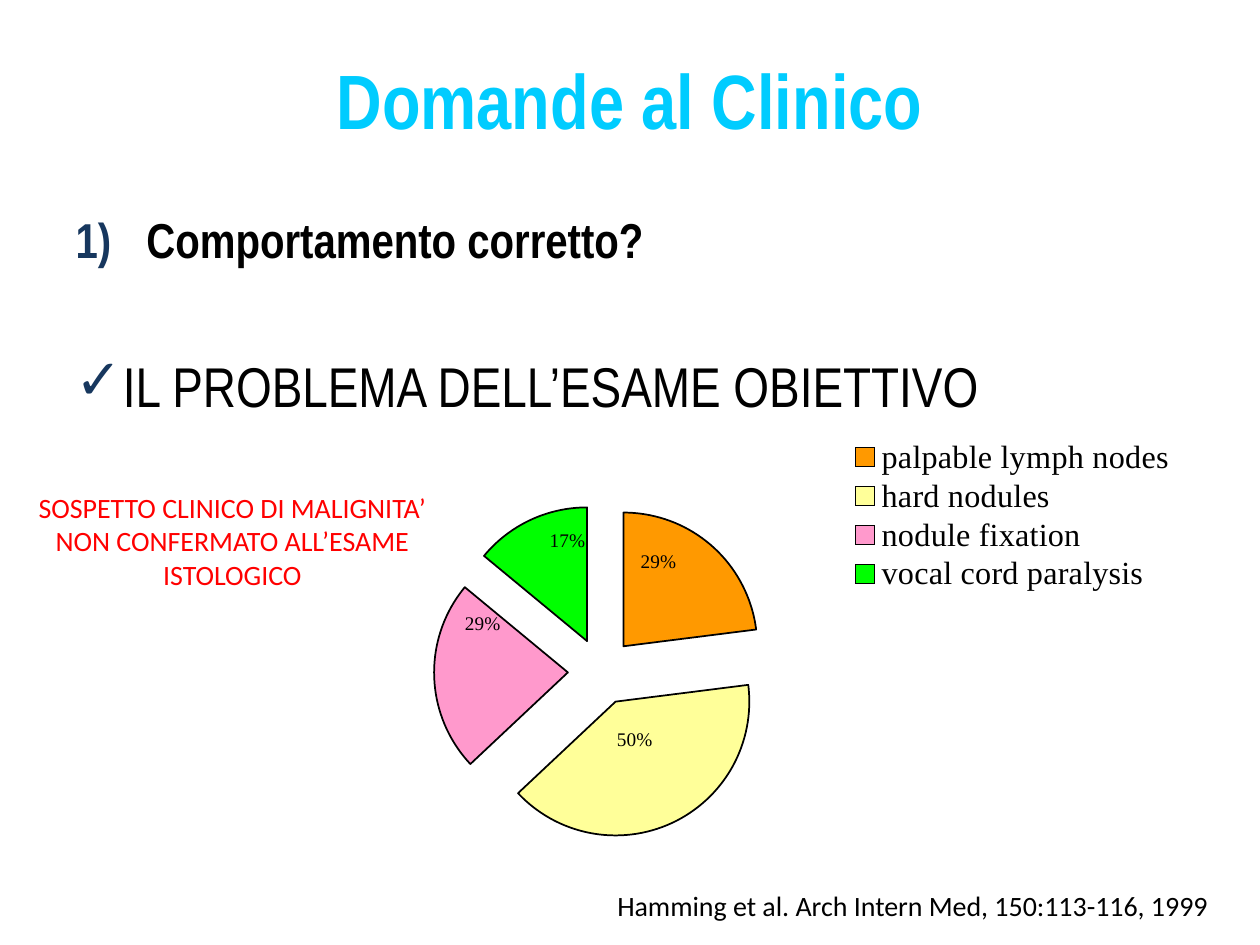
"""Build the slide on clinical examination with its exploded pie chart."""
from dataclasses import dataclass

from lxml.etree import SubElement
from pptx import Presentation
from pptx.chart.data import CategoryChartData
from pptx.dml.color import RGBColor
from pptx.enum.chart import XL_CHART_TYPE, XL_LABEL_POSITION, XL_LEGEND_POSITION
from pptx.enum.text import MSO_ANCHOR, MSO_AUTO_SIZE, PP_ALIGN
from pptx.oxml import parse_xml
from pptx.oxml.ns import nsdecls, qn
from pptx.util import Pt


@dataclass(frozen=True)
class Theme:
    """Colours, fonts and type sizes."""
    heading: str = "00CCFF"
    ink: str = "000000"
    marker: str = "17375E"
    warning: str = "FF0000"
    slices: tuple = ("FF9900", "FFFF99", "FF99CC", "00FF00")
    narrow: str = "Arial Narrow"
    plain: str = "Calibri"
    serif: str = "Times New Roman"
    title_size: float = 44
    question_size: float = 28
    problem_size: float = 32
    note_size: float = 16
    legend_size: float = 18.4
    label_size: float = 11


def apply(target, values):
    """Set each attribute named in values."""
    for attribute, value in values.items():
        setattr(target, attribute, value)


def set_font(font, name, size, color, bold=False):
    """Give a font its face, size, colour and weight."""
    apply(font, {"name": name, "size": Pt(size), "bold": bold})
    font.color.rgb = RGBColor.from_string(color)


def manual_layout(**values):
    """Return a chart layout element with the given values."""
    entries = "".join(f'<c:{tag} val="{value}"/>' for tag, value in values.items())
    return parse_xml(f'<c:layout {nsdecls("c")}><c:manualLayout>{entries}'
                     '</c:manualLayout></c:layout>')


class SlideBuilder:
    """Holds the theme and the current slide."""

    def __init__(self, slide, theme):
        self.slide = slide
        self.theme = theme

    def place(self, holder, box, anchor, margin_top=3.6):
        """Position a text holder and return its frame."""
        apply(holder, dict(zip(("left", "top", "width", "height"), map(Pt, box))))
        frame = holder.text_frame
        apply(frame, {"word_wrap": True, "auto_size": MSO_AUTO_SIZE.NONE,
                      "vertical_anchor": anchor, "margin_top": Pt(margin_top)})
        return frame

    def add_wording(self, paragraph, text, font, **layout):
        """Put one styled run in a paragraph."""
        apply(paragraph, layout)
        run = paragraph.add_run()
        run.text = text
        set_font(run.font, *font)

    def title(self, text, box):
        """Fill the title placeholder."""
        frame = self.place(self.slide.shapes.title, box, MSO_ANCHOR.MIDDLE)
        font = (self.theme.narrow, self.theme.title_size, self.theme.heading, True)
        self.add_wording(frame.paragraphs[0], text, font, alignment=PP_ALIGN.CENTER)

    def body(self, items, box, margin_top):
        """Fill the body placeholder with marked paragraphs."""
        frame = self.place(self.slide.placeholders[1], box, MSO_ANCHOR.TOP, margin_top)
        for index, (text, size, bold, gap, indent, tag, marker) in enumerate(items):
            paragraph = frame.add_paragraph() if index else frame.paragraphs[0]
            font = (self.theme.narrow, size, self.theme.ink, bold)
            self.add_wording(paragraph, text, font, space_before=Pt(gap))
            properties = paragraph._p.get_or_add_pPr()
            properties.set("marL", str(Pt(indent)))
            properties.set("indent", str(-Pt(indent)))
            color = SubElement(properties, qn("a:buClr"))
            SubElement(color, qn("a:srgbClr"), val=self.theme.marker)
            SubElement(properties, qn("a:buFont"), typeface=self.theme.narrow)
            SubElement(properties, qn(tag), **marker)

    def note(self, text, box, color, alignment, anchor):
        """Add a small text box."""
        frame = self.place(self.slide.shapes.add_textbox(*map(Pt, box)), box, anchor)
        font = (self.theme.plain, self.theme.note_size, color)
        self.add_wording(frame.paragraphs[0], text, font, alignment=alignment)

    def pie(self, findings, box):
        """Add the exploded pie with its labels and legend."""
        theme = self.theme
        findings_data = CategoryChartData()
        findings_data.categories = [finding[0] for finding in findings]
        findings_data.add_series("Series 1", [finding[1] for finding in findings])
        chart = self.slide.shapes.add_chart(
            XL_CHART_TYPE.PIE, *map(Pt, box), findings_data).chart
        apply(chart, {"has_title": False, "has_legend": True})
        set_font(chart.font, theme.serif, theme.legend_size, theme.ink)

        legend = chart.legend
        apply(legend, {"position": XL_LEGEND_POSITION.RIGHT, "include_in_layout": False})
        set_font(legend.font, theme.serif, theme.legend_size, theme.ink)
        legend._element.find(qn("c:legendPos")).addnext(manual_layout(
            xMode="edge", yMode="edge", x=0.64, y=0.22, w=0.35, h=0.28))

        plot = chart.plots[0]
        plot.vary_by_categories = True
        area = chart._chartSpace.chart.plotArea
        for automatic in area.findall(qn("c:layout")):
            area.remove(automatic)
        area.insert(0, manual_layout(layoutTarget="inner", xMode="edge", yMode="edge",
                                     x=0.06, y=0.34, w=0.59, h=0.59))

        series = plot.series[0]
        series.format.line.color.rgb = RGBColor.from_string(theme.ink)
        explosion = parse_xml(f'<c:explosion {nsdecls("c")} val="25"/>')
        series._element.find(qn("c:spPr")).addnext(explosion)
        for index, (_, _, share, x, y) in enumerate(findings):
            point = series.points[index]
            point.format.fill.solid()
            point.format.fill.fore_color.rgb = RGBColor.from_string(theme.slices[index])
            point.format.line.color.rgb = RGBColor.from_string(theme.ink)
            point.format.line.width = Pt(1)
            label = point.data_label
            font = (theme.serif, theme.label_size, theme.ink)
            self.add_wording(label.text_frame.paragraphs[0], share, font)
            label.position = XL_LABEL_POSITION.CENTER
            entry = series._element.find(qn("c:dLbls")).findall(qn("c:dLbl"))[index]
            entry.find(qn("c:idx")).addnext(manual_layout(x=x, y=y))


def main():
    """Create and save the presentation."""
    deck = Presentation()
    apply(deck, {"slide_width": Pt(720), "slide_height": Pt(540)})
    theme = Theme()
    builder = SlideBuilder(deck.slides.add_slide(deck.slide_layouts[1]), theme)
    builder.title("Domande al Clinico", (36, 16.5, 648, 80))
    builder.body([
        ("Comportamento corretto?", theme.question_size, True, 0, 40.5,
         "a:buAutoNum", {"type": "arabicParenR"}),
        ("IL PROBLEMA DELL’ESAME OBIETTIVO", theme.problem_size, False, 47, 27,
         "a:buChar", {"char": "✓"}),
    ], (36, 77, 648, 360), 43)
    builder.note("Hamming et al. Arch Intern Med, 150:113-116, 1999",
                 (175, 504, 522.5, 26.5), theme.ink, PP_ALIGN.RIGHT, MSO_ANCHOR.TOP)
    builder.pie([
        ("palpable lymph nodes", 23, "29%", -0.01, -0.06),
        ("hard nodules", 40, "50%", -0.01, -0.04),
        ("nodule fixation", 23, "29%", -0.02, -0.09),
        ("vocal cord paralysis", 14, "17%", 0.01, -0.07),
    ], (158.5, 178, 521.5, 324))
    builder.note("SOSPETTO CLINICO DI MALIGNITA’ NON CONFERMATO ALL’ESAME ISTOLOGICO",
                 (11.5, 264, 242.5, 90), theme.warning, PP_ALIGN.CENTER, MSO_ANCHOR.MIDDLE)
    deck.save("out.pptx")


if __name__ == "__main__":
    main()
